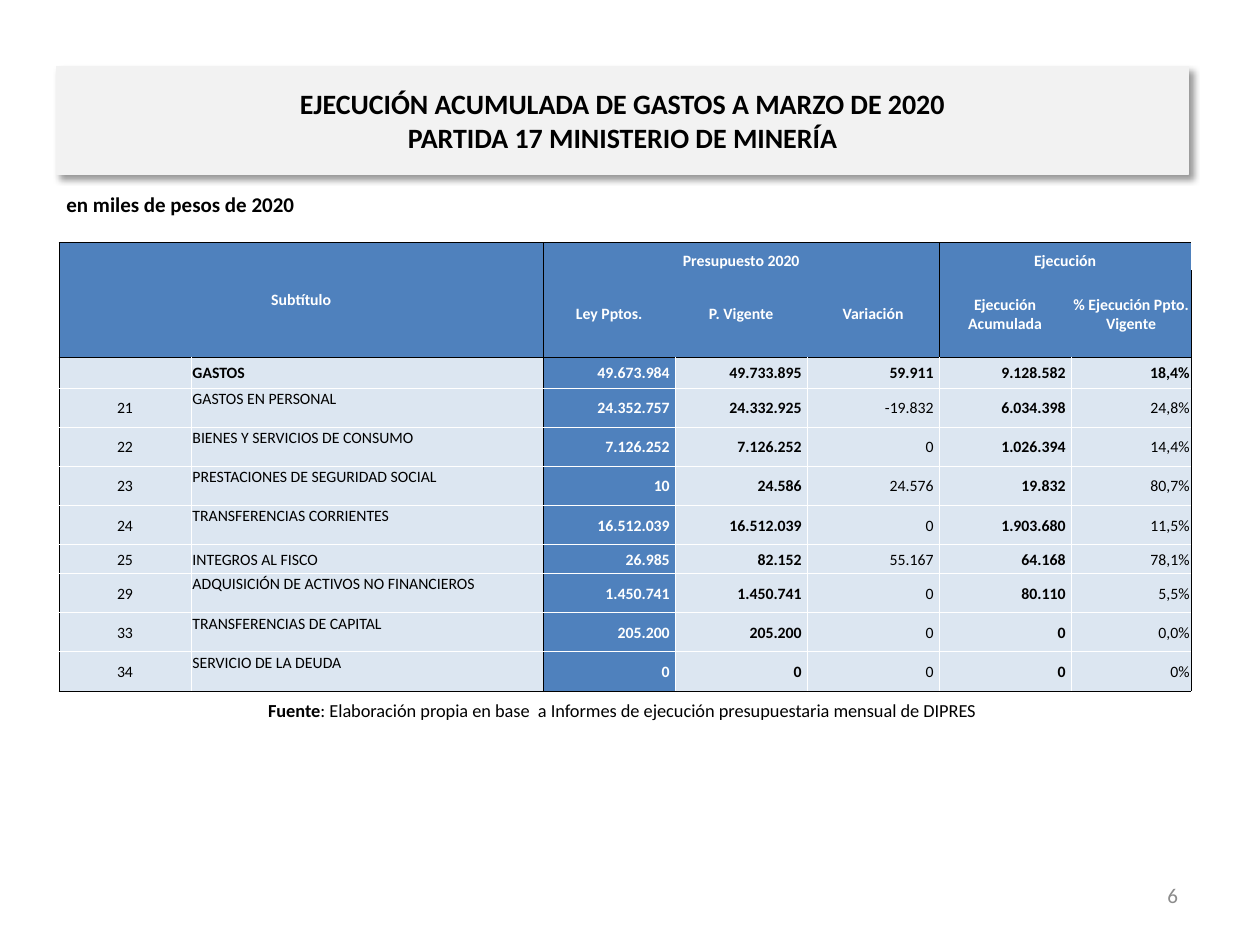
"""Build the slide with the budget execution table of the mining ministry."""
from dataclasses import dataclass

from lxml import etree
from pptx import Presentation
from pptx.dml.color import RGBColor
from pptx.enum.text import MSO_ANCHOR, MSO_AUTO_SIZE, PP_ALIGN
from pptx.oxml.ns import qn
from pptx.util import Cm, Pt

LEFT, CENTER, RIGHT, JUSTIFY = PP_ALIGN.LEFT, PP_ALIGN.CENTER, PP_ALIGN.RIGHT, PP_ALIGN.JUSTIFY
TOP, MIDDLE, BOTTOM = MSO_ANCHOR.TOP, MSO_ANCHOR.MIDDLE, MSO_ANCHOR.BOTTOM
NO_AUTOFIT = MSO_AUTO_SIZE.NONE

FONT = "Calibri"
COLORS = {
    "black": "000000",
    "white": "FFFFFF",
    "gray": "8C8C8C",
    "panel": "F2F2F2",
    "blue": "4F81BD",
    "pale": "DCE6F1",
}

COLUMN_WIDTHS = [2.66, 7.1, 2.66, 2.66, 2.66, 2.66, 2.42]
HEADER_HEIGHTS = [0.56, 1.75]
HEADER_ROWS = len(HEADER_HEIGHTS)
LAST_COLUMN = len(COLUMN_WIDTHS) - 1
HEADER_TEXTS = [
    ["Subtítulo", "", "Presupuesto 2020", "", "", "Ejecución", ""],
    ["", "", "Ley Pptos.", "P. Vigente", "Variación", "Ejecución Acumulada",
     "% Ejecución Ppto. Vigente"],
]
MERGES = [((0, 0), (1, 1)), ((0, 2), (0, 4)), ((0, 5), (0, 6))]
BOLD_COLUMNS = (2, 3, 5)
COLUMN_ALIGNMENTS = [CENTER, JUSTIFY] + [RIGHT] * 5


@dataclass
class BudgetRow:
    """One line of the budget with its row height in centimetres."""
    code: str
    name: str
    figures: list[str]
    height: float = 0.79
    name_anchor: MSO_ANCHOR = TOP
    bold: bool = False


@dataclass
class Caption:
    """A one-line text box, measured in centimetres."""
    text: str
    left: float
    top: float
    width: float
    height: float
    size: float
    alignment: PP_ALIGN
    anchor: MSO_ANCHOR = MIDDLE
    color: str = "black"
    bold_text: str = ""


BUDGET_ROWS = [
    BudgetRow("", "GASTOS", ["49.673.984", "49.733.895", "59.911", "9.128.582", "18,4%"],
              0.62, MIDDLE, True),
    BudgetRow("21", "GASTOS EN PERSONAL",
              ["24.352.757", "24.332.925", "-19.832", "6.034.398", "24,8%"]),
    BudgetRow("22", "BIENES Y SERVICIOS DE CONSUMO",
              ["7.126.252", "7.126.252", "0", "1.026.394", "14,4%"]),
    BudgetRow("23", "PRESTACIONES DE SEGURIDAD SOCIAL",
              ["10", "24.586", "24.576", "19.832", "80,7%"]),
    BudgetRow("24", "TRANSFERENCIAS CORRIENTES",
              ["16.512.039", "16.512.039", "0", "1.903.680", "11,5%"]),
    BudgetRow("25", "INTEGROS AL FISCO",
              ["26.985", "82.152", "55.167", "64.168", "78,1%"], 0.58, MIDDLE),
    BudgetRow("29", "ADQUISICIÓN DE ACTIVOS NO FINANCIEROS",
              ["1.450.741", "1.450.741", "0", "80.110", "5,5%"]),
    BudgetRow("33", "TRANSFERENCIAS DE CAPITAL", ["205.200", "205.200", "0", "0", "0,0%"]),
    BudgetRow("34", "SERVICIO DE LA DEUDA", ["0", "0", "0", "0", "0%"]),
]
CAPTIONS = [
    Caption("", 1.09, 3.73, 20.83, 1.07, 12, LEFT, TOP, bold_text="en miles de pesos de 2020"),
    Caption(": Elaboración propia en base  a Informes de ejecución presupuestaria mensual de DIPRES",
            1.19, 13.92, 22.71, 0.81, 10.5, CENTER, bold_text="Fuente"),
    Caption("6", 18.08, 17.53, 5.92, 1.02, 12, RIGHT, color="gray"),
]


def rgb(name: str) -> RGBColor:
    return RGBColor.from_string(COLORS[name])


def format_run(run, size: float, color: str, bold: bool) -> None:
    run.font.name = FONT
    run.font.size = Pt(size)
    run.font.bold = bold
    run.font.color.rgb = rgb(color)


def add_shadow(shape) -> None:
    effects = etree.SubElement(shape._element.spPr, qn("a:effectLst"))
    shadow = etree.SubElement(effects, qn("a:outerShdw"), blurRad=str(Pt(4)), dist=str(Pt(3)),
                              dir="2700000", algn="tl", rotWithShape="0")
    color = etree.SubElement(shadow, qn("a:srgbClr"), val=COLORS["black"])
    etree.SubElement(color, qn("a:alpha"), val="40000")


def place_title(slide) -> None:
    title = slide.shapes.title
    title.left, title.top, title.width, title.height = Cm(1.14), Cm(1.35), Cm(22.82), Cm(2.16)
    title.fill.solid()
    title.fill.fore_color.rgb = rgb("panel")
    title.line.color.rgb = rgb("panel")
    title.line.width = Pt(0.75)
    add_shadow(title)
    frame = title.text_frame
    frame.text = "EJECUCIÓN ACUMULADA DE GASTOS A MARZO DE 2020\vPARTIDA 17 MINISTERIO DE MINERÍA"
    frame.auto_size = NO_AUTOFIT
    frame.vertical_anchor = MIDDLE
    frame.paragraphs[0].alignment = CENTER
    for run in frame.paragraphs[0].runs:
        format_run(run, 16, "black", True)


def add_caption(slide, caption: Caption) -> None:
    box = slide.shapes.add_textbox(Cm(caption.left), Cm(caption.top),
                                   Cm(caption.width), Cm(caption.height))
    frame = box.text_frame
    frame.word_wrap = True
    frame.vertical_anchor = caption.anchor
    paragraph = frame.paragraphs[0]
    paragraph.alignment = caption.alignment
    for text, bold in ((caption.bold_text, True), (caption.text, False)):
        if text:
            run = paragraph.add_run()
            run.text = text
            format_run(run, caption.size, caption.color, bold)


def set_borders(cell, row: int, column: int, last_row: int) -> None:
    header = row < HEADER_ROWS
    black_edges = {
        "L": column in ((0, 2, 5) if header else (0, 2)),
        "R": column in ((1, 4, LAST_COLUMN) if header else (1, LAST_COLUMN)),
        "T": row in (0, HEADER_ROWS),
        "B": row in (HEADER_ROWS - 1, last_row),
    }
    properties = cell._tc.get_or_add_tcPr()
    for side, black in black_edges.items():
        line = etree.SubElement(properties, qn(f"a:ln{side}"), w=str(Pt(0.5)))
        if header and not black:
            etree.SubElement(line, qn("a:noFill"))
        else:
            fill = etree.SubElement(line, qn("a:solidFill"))
            etree.SubElement(fill, qn("a:srgbClr"), val=COLORS["black" if black else "white"])


def fill_cell(cell, text: str, alignment: PP_ALIGN, anchor: MSO_ANCHOR,
              bold: bool, blue: bool, right_margin: float) -> None:
    cell.fill.solid()
    cell.fill.fore_color.rgb = rgb("blue" if blue else "pale")
    cell.margin_left, cell.margin_right = Cm(0.03), Cm(right_margin)
    cell.margin_top, cell.margin_bottom = Cm(0.03), Cm(0)
    cell.vertical_anchor = anchor
    paragraph = cell.text_frame.paragraphs[0]
    paragraph.text = text
    paragraph.alignment = alignment
    for run in paragraph.runs:
        format_run(run, 9, "white" if blue else "black", bold)
    etree.SubElement(paragraph._p, qn("a:endParaRPr"), sz="900")


def add_budget_table(slide) -> None:
    heights = HEADER_HEIGHTS + [budget.height for budget in BUDGET_ROWS]
    table = slide.shapes.add_table(len(heights), len(COLUMN_WIDTHS), Cm(1.19), Cm(4.89),
                                   Cm(sum(COLUMN_WIDTHS)), Cm(sum(heights))).table
    table.first_row = table.horz_banding = False
    for column, width in zip(table.columns, COLUMN_WIDTHS):
        column.width = Cm(width)
    for row, height in zip(table.rows, heights):
        row.height = Cm(height)
    for first, last in MERGES:
        table.cell(*first).merge(table.cell(*last))
    for row in range(len(heights)):
        for column in range(len(COLUMN_WIDTHS)):
            cell = table.cell(row, column)
            set_borders(cell, row, column, len(heights) - 1)
            if row < HEADER_ROWS:
                anchor = BOTTOM if row == 0 and column >= 2 else MIDDLE
                fill_cell(cell, HEADER_TEXTS[row][column], CENTER, anchor, True, True, 0.03)
                continue
            budget = BUDGET_ROWS[row - HEADER_ROWS]
            fill_cell(cell, [budget.code, budget.name, *budget.figures][column],
                      COLUMN_ALIGNMENTS[column], budget.name_anchor if column == 1 else MIDDLE,
                      budget.bold or column in BOLD_COLUMNS, column == 2,
                      0.11 if 2 <= column < LAST_COLUMN else 0.03)


def main() -> None:
    presentation = Presentation()
    presentation.slide_width, presentation.slide_height = Cm(25.4), Cm(19.05)
    slide = presentation.slides.add_slide(presentation.slide_layouts[5])
    place_title(slide)
    for caption in CAPTIONS:
        add_caption(slide, caption)
    add_budget_table(slide)
    presentation.save("out.pptx")


if __name__ == "__main__":
    main()
